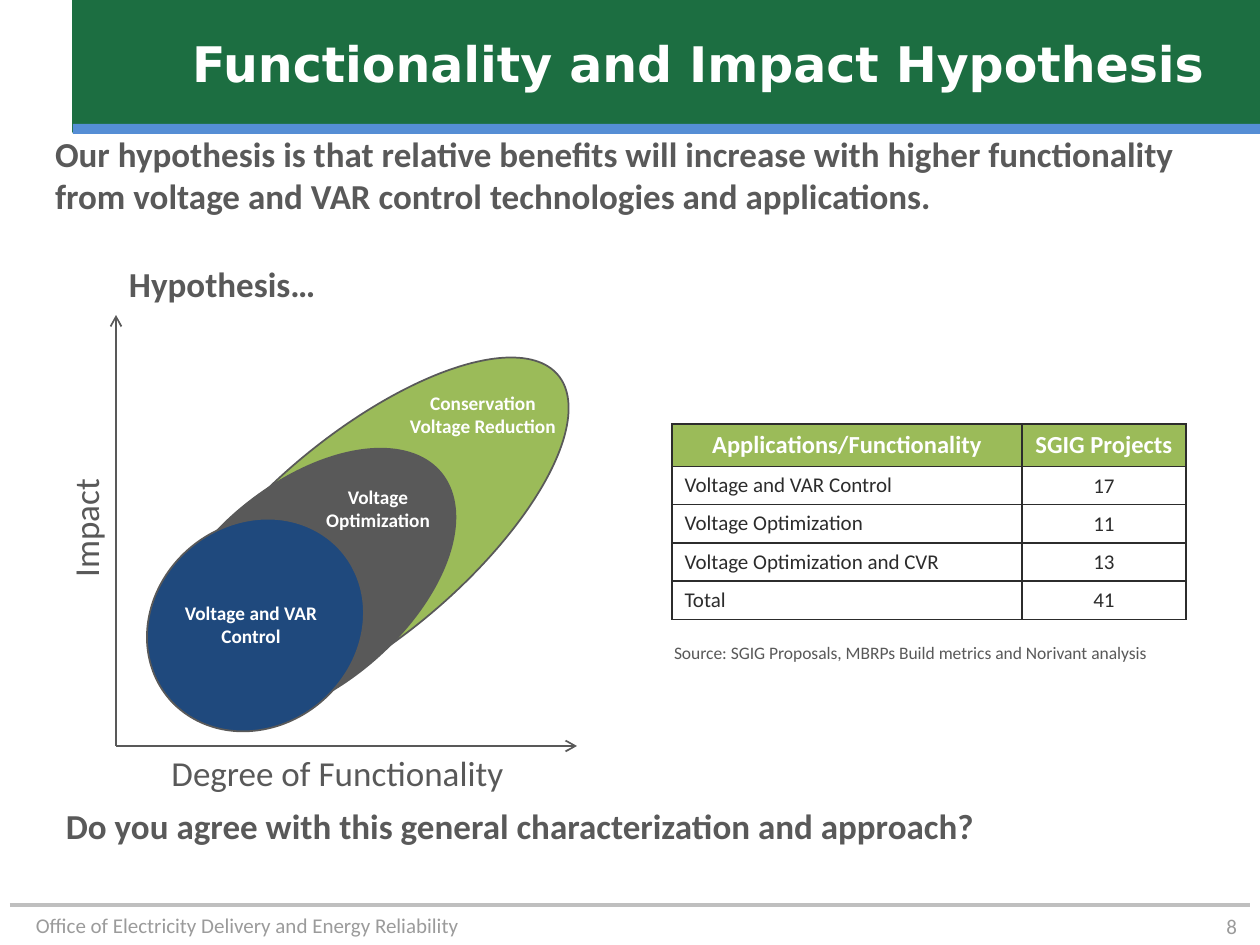
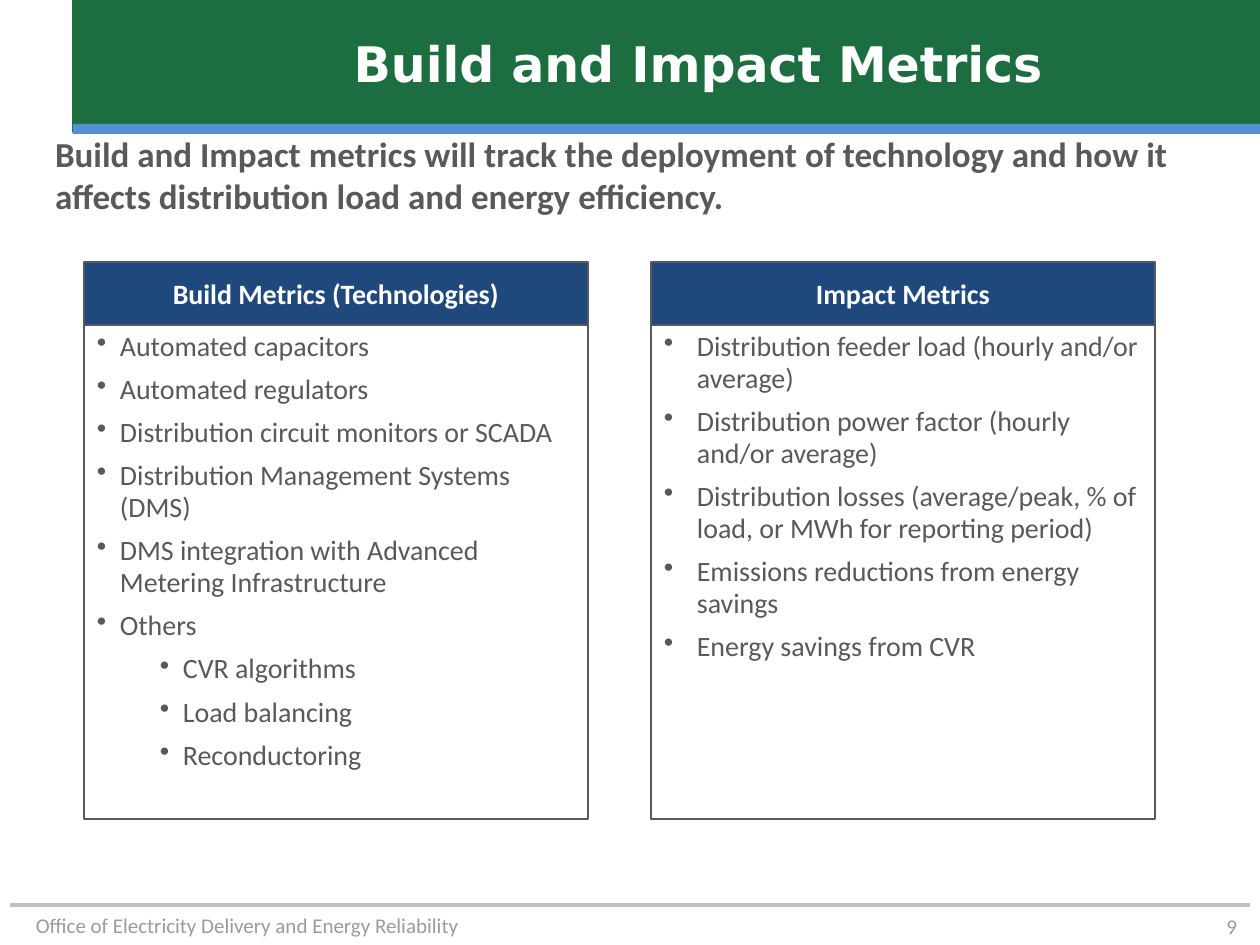
from lxml import etree
from pptx import Presentation
from pptx.dml.color import RGBColor
from pptx.enum.shapes import MSO_CONNECTOR, MSO_SHAPE
from pptx.enum.text import MSO_ANCHOR, MSO_AUTO_SIZE, PP_ALIGN
from pptx.oxml.ns import qn
from pptx.util import Emu, Pt

LEFT, CENTER, RIGHT = PP_ALIGN.LEFT, PP_ALIGN.CENTER, PP_ALIGN.RIGHT
TOP, MIDDLE = MSO_ANCHOR.TOP, MSO_ANCHOR.MIDDLE
NO_AUTOFIT = MSO_AUTO_SIZE.NONE
RECTANGLE, OVAL = MSO_SHAPE.RECTANGLE, MSO_SHAPE.OVAL
STRAIGHT = MSO_CONNECTOR.STRAIGHT

BODY_FONT, TITLE_FONT = "Calibri", "DejaVu Sans"
GREEN, BLUE, NAVY, LIME = "1C6E41", "558ED5", "1F497D", "9BBB59"
GREY, FOOTER_GREY, RULE_GREY = "595959", "9B9B9B", "BFBFBF"
INK, WHITE = "2C2C2C", "FFFFFF"

PX_PER_INCH = 126
PAGE_WIDTH, PAGE_HEIGHT = 1260, 945
FIRST_PAGE_NUMBER = 8


def px(length):
    return Emu(round(length * 914400 / PX_PER_INCH))


def rgb(color):
    return RGBColor.from_string(color)


def style_paragraph(para, size, color, bold=False, align=LEFT, font=BODY_FONT):
    para.alignment = align
    para.font.name = font
    para.font.size = Pt(size)
    para.font.bold = bold
    para.font.color.rgb = rgb(color)


def set_bullet(para, indent, hanging, char=None):
    """Set the indents and the bullet; no char means no bullet."""
    properties = para._p.get_or_add_pPr()
    properties.set("marL", str(px(indent)))
    properties.set("indent", str(-px(hanging)))
    if char:
        etree.SubElement(properties, qn("a:buChar")).set("char", char)
    else:
        etree.SubElement(properties, qn("a:buNone"))


def write(shape, lines, size, color, anchor=TOP, inset=6, **style):
    frame = shape.text_frame
    frame.word_wrap = True
    frame.auto_size = NO_AUTOFIT
    frame.vertical_anchor = anchor
    frame.margin_left = frame.margin_right = px(13)
    frame.margin_top = frame.margin_bottom = px(inset)
    frame.text = "\n".join(lines)
    for para in frame.paragraphs:
        style_paragraph(para, size, color, **style)
    return frame


def add_text(page, box, lines, size, color, **style):
    shape = page.shapes.add_textbox(*map(px, box))
    write(shape, lines, size, color, **style)
    return shape


def add_block(page, kind, box, fill=None, line=None):
    shape = page.shapes.add_shape(kind, *map(px, box))
    shape.shadow.inherit = False
    if fill:
        shape.fill.solid()
        shape.fill.fore_color.rgb = rgb(fill)
    else:
        shape.fill.background()
    if line:
        shape.line.color.rgb = rgb(line)
        shape.line.width = Pt(1)
    else:
        shape.line.fill.background()
    return shape


def add_line(page, start, end, color, width, arrow=False):
    line = page.shapes.add_connector(STRAIGHT, *map(px, start + end))
    line.line.color.rgb = rgb(color)
    line.line.width = Pt(width)
    if arrow:
        etree.SubElement(line.line._get_or_add_ln(), qn("a:tailEnd")).set("type", "arrow")
    etree.SubElement(line._element.spPr, qn("a:effectLst"))
    return line


def add_shared_parts(page):
    """Draw the band and the footer, then move them to the back of the layout."""
    parts = [
        add_block(page, RECTANGLE, (73, 0, 1187, 132), GREEN, GREEN),
        add_block(page, RECTANGLE, (73, 124, 1187, 10), BLUE),
        add_text(page, (0, 907, 472, 38), ["Office of Electricity Delivery and Energy Reliability"],
                 12, FOOTER_GREY, align=RIGHT),
        add_line(page, (10, 905), (1250, 905), RULE_GREY, 1.75),
    ]
    layout_tree = page.slide_layout.shapes.element
    for position, part in enumerate(parts, start=2):
        layout_tree.insert(position, part.element)


def place(placeholder, box):
    placeholder.left, placeholder.top, placeholder.width, placeholder.height = map(px, box)


def add_page(deck, number, title, statement):
    page = deck.slides.add_slide(deck.slide_layouts[1])
    if number == FIRST_PAGE_NUMBER:
        add_shared_parts(page)
    heading, body = page.placeholders
    place(heading, (136, 0, 1124, 126))
    write(heading, [title], 28, WHITE, anchor=MIDDLE, bold=True, align=CENTER, font=TITLE_FONT)
    place(body, (42, 126, 1172, 84))
    frame = write(body, [statement], 20, GREY, bold=True)
    para = frame.paragraphs[0]
    para.space_before = Pt(0)
    # The bullet element has to precede the font properties.
    para._p.remove(para._p.pPr)
    set_bullet(para, 0, 0)
    style_paragraph(para, 20, GREY, bold=True)
    para.space_before = Pt(0)
    add_text(page, (935, 908, 315, 37), [str(number)], 12, FOOTER_GREY,
             anchor=MIDDLE, inset=0, align=RIGHT)
    return page


def add_hypothesis_diagram(page, left, top):
    """Draw the axes and nested ellipses, with left and top at the heading's corner."""
    def at(x, y, width, height):
        return left + x, top + y, width, height

    ellipses = [
        (at(-3, 174, 504, 202), LIME),
        (at(13, 223, 353, 202), GREY),
        (at(26, 262, 227, 202), NAVY),
    ]
    for box, fill in ellipses:
        add_block(page, OVAL, box, fill, GREY).rotation = 320

    labels = [
        (at(241, 116, 252, 84), ["Conservation", "Voltage Reduction"]),
        (at(178, 210, 168, 32), ["Voltage", "Optimization"]),
        (at(51, 326, 168, 80), ["Voltage and VAR", "Control"]),
    ]
    for box, lines in labels:
        add_text(page, box, lines, 11, WHITE, inset=13, bold=True, align=CENTER)

    origin = (left, top + 484)
    add_line(page, origin, (left, top + 53), GREY, 1, arrow=True)
    add_line(page, origin, (left + 461, top + 484), GREY, 1, arrow=True)
    axis_style = dict(anchor=MIDDLE, inset=13, align=CENTER)
    impact = add_text(page, at(-116, 245, 170, 42), ["Impact"], 20, GREY, **axis_style)
    impact.rotation = 270
    add_text(page, at(-4, 484, 451, 53), ["Degree of Functionality"], 20, GREY, **axis_style)
    add_text(page, at(0, 0, 472, 42), ["Hypothesis…"], 20, GREY,
             anchor=MIDDLE, inset=13, bold=True)


def border_cell(cell):
    properties = cell._tc.get_or_add_tcPr()
    for position, side in enumerate(("lnL", "lnR", "lnT", "lnB")):
        border = etree.Element(qn(f"a:{side}"), w=str(Pt(1)))
        fill = etree.SubElement(border, qn("a:solidFill"))
        etree.SubElement(fill, qn("a:srgbClr")).set("val", INK)
        properties.insert(position, border)


def add_project_table(page, left, top):
    rows = [
        ("Applications/Functionality", "SGIG Projects"),
        ("Voltage and VAR Control", "17"),
        ("Voltage Optimization", "11"),
        ("Voltage Optimization and CVR", "13"),
        ("Total", "41"),
    ]
    widths, header_height, row_height = (350, 164), 42, 38
    height = header_height + row_height * (len(rows) - 1)
    table = page.shapes.add_table(len(rows), len(widths), px(left), px(top),
                                  px(sum(widths)), px(height)).table
    for column, width in zip(table.columns, widths):
        column.width = px(width)
    for row_index, values in enumerate(rows):
        is_header = row_index == 0
        table.rows[row_index].height = px(header_height if is_header else row_height)
        for column_index, value in enumerate(values):
            cell = table.cell(row_index, column_index)
            cell.text = value
            cell.vertical_anchor = TOP if is_header else MIDDLE
            cell.fill.solid()
            cell.fill.fore_color.rgb = rgb(LIME if is_header else WHITE)
            if column_index and not is_header:
                cell.margin_left = cell.margin_right = cell.margin_top = px(1)
                cell.margin_bottom = 0
            style_paragraph(cell.text_frame.paragraphs[0], 14 if is_header else 12,
                            WHITE if is_header else INK, bold=is_header,
                            align=CENTER if is_header or column_index else LEFT)
            border_cell(cell)
    add_text(page, (left - 11, top + 205, 525, 42),
             ["Source: SGIG Proposals, MBRPs Build metrics and Norivant analysis"],
             10, GREY, inset=13)


def add_metric_panel(page, left, top, heading, items, hanging):
    """Draw a headed list; items are pairs of level and text."""
    width, heading_height, list_height = 504, 63, 494
    panel = add_block(page, RECTANGLE, (left, top + heading_height, width, list_height), line=GREY)
    frame = write(panel, [], 16, GREY)
    for index, (level, text) in enumerate(items):
        para = frame.add_paragraph() if index else frame.paragraphs[0]
        para._p.remove(para._p.get_or_add_pPr())
        para.text = text
        para.level = level
        set_bullet(para, hanging + 63 * level, hanging, "•")
        style_paragraph(para, 16, GREY)
        para.line_spacing = 0.95
        para.space_before = Pt(6.4 if index else 0)
    header = add_block(page, RECTANGLE, (left, top, width, heading_height), NAVY, GREY)
    write(header, [heading], 16, WHITE, anchor=MIDDLE, inset=0, bold=True, align=CENTER)


def build_hypothesis_page(deck, number):
    page = add_page(deck, number, "Functionality and Impact Hypothesis",
                    "Our hypothesis is that relative benefits will increase with higher "
                    "functionality from voltage and VAR control technologies and applications.")
    add_hypothesis_diagram(page, 116, 262)
    add_project_table(page, 672, 424)
    add_text(page, (53, 798, 1172, 84),
             ["Do you agree with this general characterization and approach?"],
             20, GREY, bold=True)


def build_metrics_page(deck, number):
    page = add_page(deck, number, "Build and Impact Metrics",
                    "Build and Impact metrics will track the deployment of technology and "
                    "how it affects distribution load and energy efficiency.")
    technologies = [
        (0, "Automated capacitors"),
        (0, "Automated regulators"),
        (0, "Distribution circuit monitors or SCADA"),
        (0, "Distribution Management Systems (DMS)"),
        (0, "DMS integration with Advanced Metering Infrastructure"),
        (0, "Others"),
        (1, "CVR algorithms"),
        (1, "Load balancing"),
        (1, "Reconductoring"),
    ]
    impacts = [
        (0, "Distribution feeder load (hourly and/or average)"),
        (0, "Distribution power factor (hourly and/or average)"),
        (0, "Distribution losses (average/peak, % of load, or MWh for reporting period)"),
        (0, "Emissions reductions from energy savings"),
        (0, "Energy savings from CVR"),
    ]
    add_metric_panel(page, 84, 262, "Build Metrics (Technologies)", technologies, 23)
    add_metric_panel(page, 651, 262, "Impact Metrics", impacts, 33)


def main():
    deck = Presentation()
    deck.slide_width, deck.slide_height = px(PAGE_WIDTH), px(PAGE_HEIGHT)
    builders = (build_hypothesis_page, build_metrics_page)
    for number, build in enumerate(builders, start=FIRST_PAGE_NUMBER):
        build(deck, number)
    deck.save("out.pptx")


if __name__ == "__main__":
    main()
